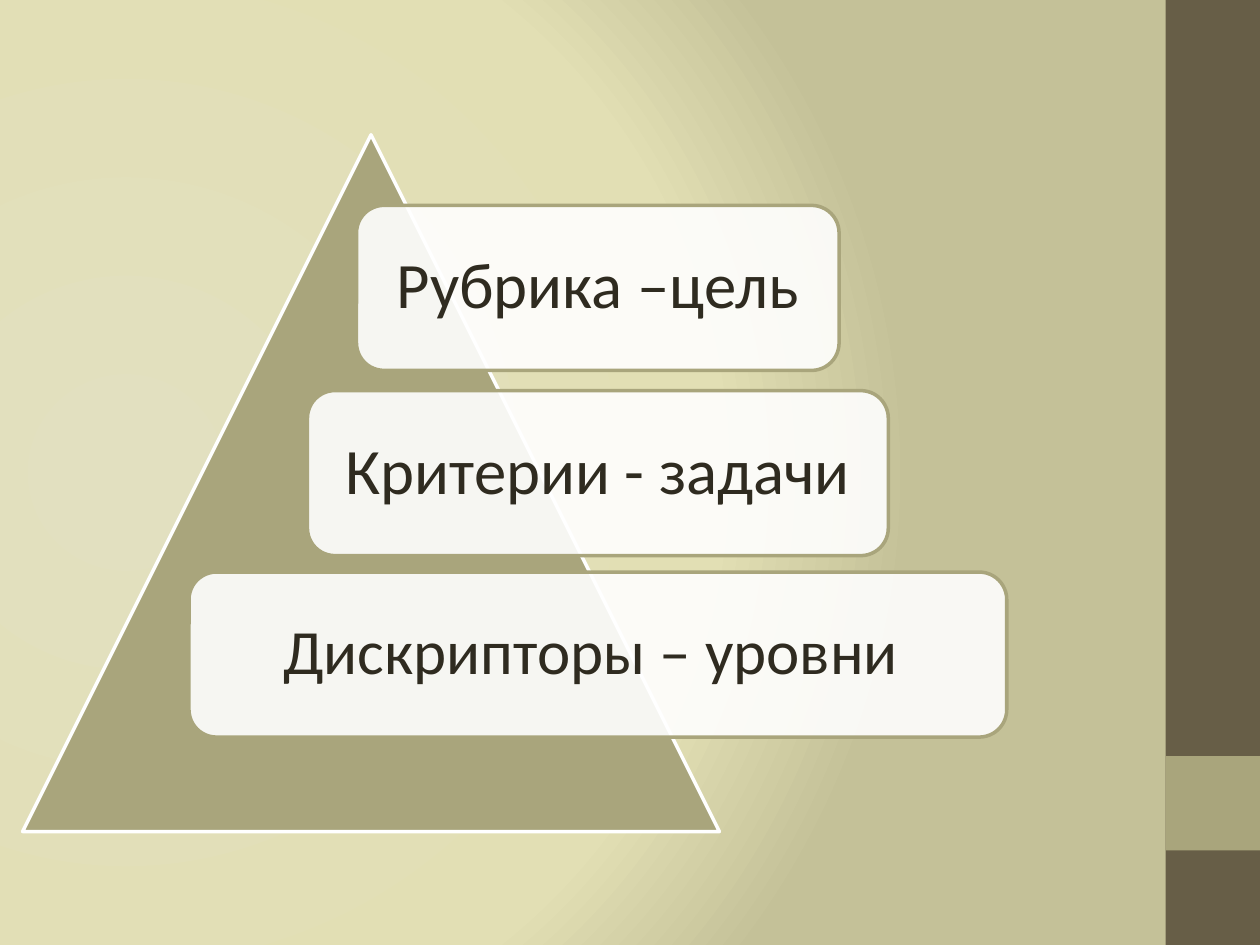
from lxml import etree
from pptx import Presentation
from pptx.dml.color import RGBColor
from pptx.enum.shapes import MSO_SHAPE as Shape
from pptx.enum.text import MSO_ANCHOR as Anchor, PP_ALIGN as Align
from pptx.oxml import parse_xml
from pptx.oxml.ns import nsdecls, qn
from pptx.util import Inches, Pt

SAGE, BROWN, WHITE, INK = "A9A57C", "675E47", "FFFFFF", "2F2B20"


def rgb(code):
    return RGBColor.from_string(code)


def add_block(kind, left, top, width, height, fill, line=None):
    block = slide.shapes.add_shape(
        kind, Inches(left), Inches(top), Inches(width), Inches(height))
    block.shadow.inherit = False
    block.fill.solid()
    block.fill.fore_color.rgb = rgb(fill)
    if line:
        block.line.color.rgb = rgb(line)
        block.line.width = Pt(2)
    else:
        block.line.fill.background()
    return block


prs = Presentation()
prs.slide_width, prs.slide_height = Inches(10), Inches(7.5)
slide = prs.slides.add_slide(prs.slide_layouts[6])

# Radial background
stops = "".join(
    f'<a:gs pos="{percent * 1000}"><a:srgbClr val="{color}"/></a:gs>'
    for percent, color in [(0, "E2E0C0"), (75, "E2DFB4"), (100, "C4C198")])
background = parse_xml(
    f'<p:bg {nsdecls("p", "a")}><p:bgPr><a:gradFill rotWithShape="1">'
    f'<a:gsLst>{stops}</a:gsLst><a:path path="circle">'
    '<a:fillToRect l="20000" t="50000" r="100000" b="50000"/></a:path>'
    '</a:gradFill><a:effectLst/></p:bgPr></p:bg>')
slide.element.cSld.insert(0, background)

# Side band with its accent square
add_block(Shape.RECTANGLE, 9.25, 0, 0.75, 7.5, BROWN)
add_block(Shape.RECTANGLE, 9.25, 6, 0.75, 0.75, SAGE)

# Pyramid and its levels, centred on one axis
add_block(Shape.ISOSCELES_TRIANGLE, 0.18, 1.07, 5.53, 5.53, SAGE, WHITE)

axis = 4.745
levels = [
    ("Рубрика –цель", 1.63, 3.83, 37),
    ("Критерии - задачи", 3.1, 4.61, 37),
    ("Дискрипторы – уровни ", 4.54, 6.49, 36),
]
for wording, top, width, size in levels:
    level = add_block(Shape.ROUNDED_RECTANGLE, axis - width / 2, top,
                      width, 1.31, WHITE, SAGE)
    white = level.fill._xPr.find(qn("a:solidFill"))[0]
    etree.SubElement(white, qn("a:alpha"), val="90000")

    frame = level.text_frame
    frame.word_wrap = True
    frame.vertical_anchor = Anchor.MIDDLE
    frame.margin_left = frame.margin_right = Inches(0.15)
    frame.margin_top = frame.margin_bottom = Inches(0.15)
    paragraph = frame.paragraphs[0]
    paragraph.alignment = Align.CENTER
    paragraph.line_spacing = 0.9
    run = paragraph.add_run()
    run.text = wording
    run.font.name = "Calibri"
    run.font.size = Pt(size)
    run.font.color.rgb = rgb(INK)

prs.save("out.pptx")
